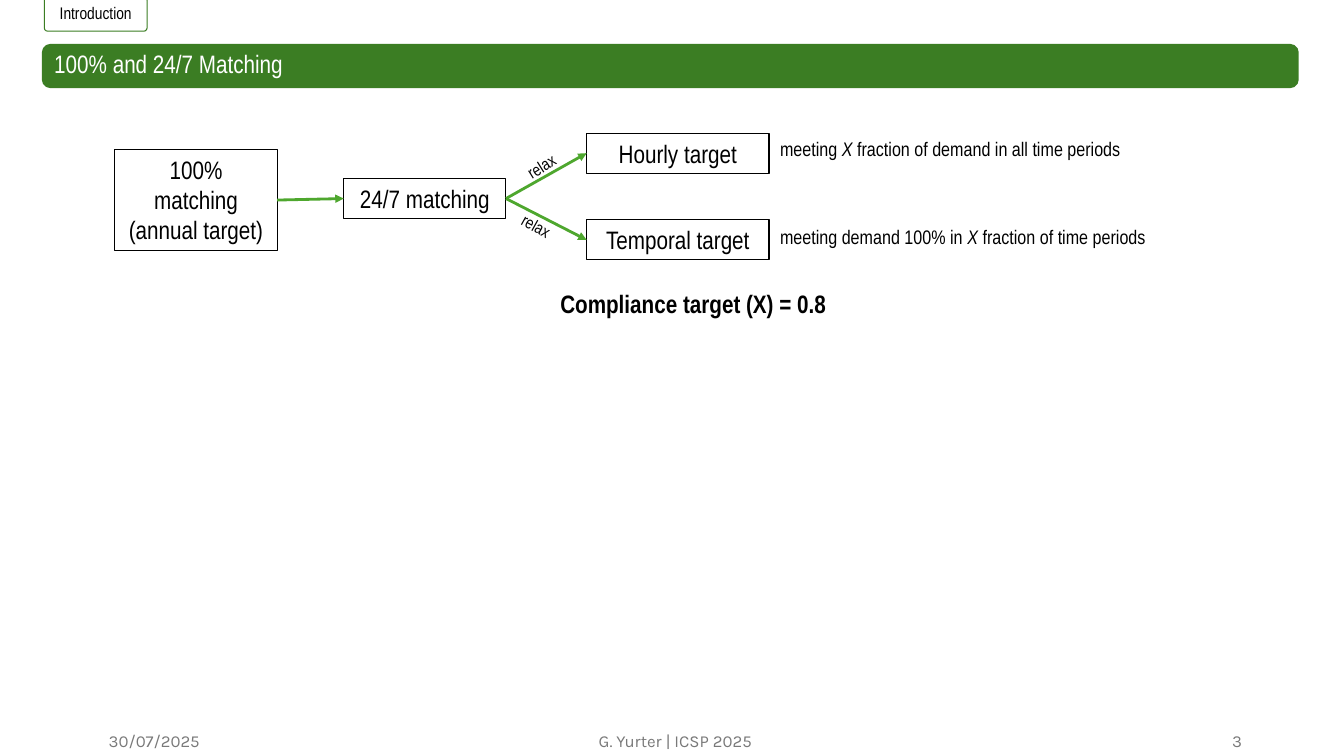
import pptx
import pptx.dml.color
import pptx.enum.shapes
import pptx.enum.text
import pptx.util
from lxml import etree

SHAPE = pptx.enum.shapes.MSO_SHAPE
ALIGN = {"l": pptx.enum.text.PP_ALIGN.LEFT,
         "c": pptx.enum.text.PP_ALIGN.CENTER,
         "r": pptx.enum.text.PP_ALIGN.RIGHT}
ANCHOR = pptx.enum.text.MSO_ANCHOR

GREEN, ARROW, BLACK, WHITE, GREY = "3B7D23", "4EA72E", "000000", "FFFFFF", "797979"
COLUMNS, ROWS = 133.33, 75


def rgb(value):
    return pptx.dml.color.RGBColor.from_string(value)


def write(sp, text, size=18, font="Arial Narrow", color=BLACK, bold=False,
          align="l", anchor=ANCHOR.TOP, wrap=True, inset=0.1):
    """Fill a shape with text; every second piece between asterisks is italic."""
    tf = sp.text_frame
    tf.word_wrap = wrap
    tf.vertical_anchor = anchor
    tf.margin_left = tf.margin_right = pptx.util.Inches(inset)
    tf.margin_top = tf.margin_bottom = pptx.util.Inches(0.05)
    p = tf.paragraphs[0]
    p.alignment = ALIGN[align]
    for i, piece in enumerate(text.split("*")):
        r = p.add_run()
        r.text = piece
        r.font.name = font
        r.font.size = pptx.util.Pt(size)
        r.font.color.rgb = rgb(color)
        r.font.bold = bold
        r.font.italic = i % 2 == 1


class Deck:
    """Holds the presentation, the current slide and its grid."""

    def __init__(self):
        self.prs = pptx.Presentation()
        self.prs.slide_width = pptx.util.Inches(13.33)
        self.prs.slide_height = pptx.util.Inches(7.5)
        self.s = self.prs.slides.add_slide(self.prs.slide_layouts[6])

    def place(self, col, row, cols, rows):
        """Turn grid columns and rows into slide lengths."""
        w = self.prs.slide_width / COLUMNS
        h = self.prs.slide_height / ROWS
        return [round(v) for v in (col * w, row * h, cols * w, rows * h)]

    def box(self, at, kind=SHAPE.RECTANGLE, fill=None, line=BLACK, width=0.75,
            radius=None):
        sp = self.s.shapes.add_shape(kind, *self.place(*at))
        sp.shadow.inherit = False
        if fill:
            sp.fill.solid()
            sp.fill.fore_color.rgb = rgb(fill)
        else:
            sp.fill.background()
        sp.line.color.rgb = rgb(line)
        sp.line.width = pptx.util.Pt(width)
        if radius is not None:
            sp.adjustments[0] = radius
        return sp

    def node(self, text, *at):
        sp = self.box(at)
        write(sp, text, align="c", inset=0.12)
        return sp

    def label(self, text, at, rotation=0, **style):
        sp = self.s.shapes.add_textbox(*self.place(*at))
        sp.rotation = rotation
        write(sp, text, **style)

    def arrow(self, start, end):
        """Join the right side of one node to the left side of another."""
        cx = self.s.shapes.add_connector(
            pptx.enum.shapes.MSO_CONNECTOR.STRAIGHT, 0, 0, 0, 0)
        cx.begin_connect(start, 3)
        cx.end_connect(end, 1)
        cx.line.color.rgb = rgb(ARROW)
        cx.line.width = pptx.util.Pt(2)
        qn = pptx.oxml.ns.qn
        etree.SubElement(cx.line._get_or_add_ln(), qn("a:tailEnd"), type="triangle")
        etree.SubElement(cx._element.spPr, qn("a:effectLst"))


def main():
    deck = Deck()

    deck.box((4.3, 4.5, 124.4, 4.1), SHAPE.ROUNDED_RECTANGLE, GREEN, GREEN, 2, 0.17)
    deck.label("100% and 24/7 Matching", (4.4, 4.3, 124.1, 4), color=WHITE)
    tab = deck.box((4.4, -0.3, 10.2, 3.4), SHAPE.ROUNDED_RECTANGLE, line=GREEN,
                   radius=0.1)
    write(tab, "Introduction", size=12, align="c")

    annual = deck.node("100% matching (annual target)", 11.4, 14.8, 16.1, 10.1)
    matching = deck.node("24/7 matching", 34.1, 17.7, 16.1, 4)
    hourly = deck.node("Hourly target", 58.2, 13.2, 18.1, 4)
    temporal = deck.node("Temporal target", 58.2, 21.8, 18.1, 4)
    for start, end in ((annual, matching), (matching, hourly), (matching, temporal)):
        deck.arrow(start, end)

    for text, row in (("meeting *X* fraction of demand in all time periods", 13.1),
                      ("meeting demand 100% in *X *fraction of time periods", 21.8)):
        deck.label(text, (76.4, row, 45.1, 3.4), size=14)
    for col, row, rotation in ((51.1, 15, 328), (50.6, 20.9, 29.2)):
        deck.label("relax", (col, row, 5.2, 3), rotation, size=12, align="c",
                   wrap=False)
    deck.label("Compliance target (X) = 0.8", (54.6, 28.1, 29, 4), bold=True)

    for text, col, cols, align in (("30/07/2025", 9.8, 30, "l"),
                                   ("G. Yurter | ICSP 2025", 44.5, 45, "c"),
                                   ("3", 94.2, 30, "r")):
        deck.label(text, (col, 71.5, cols, 4), size=12, font="Karla", color=GREY,
                   align=align, anchor=ANCHOR.MIDDLE)

    deck.prs.save("out.pptx")


if __name__ == "__main__":
    main()
